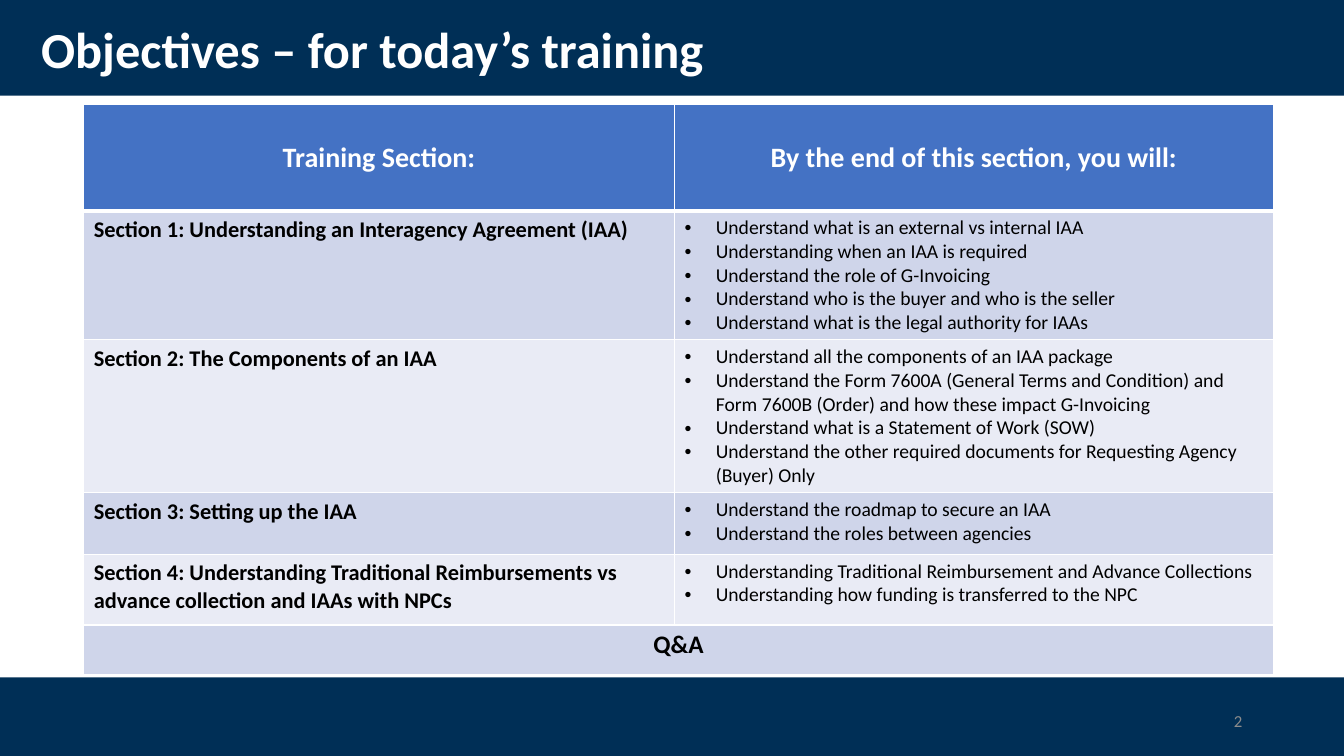
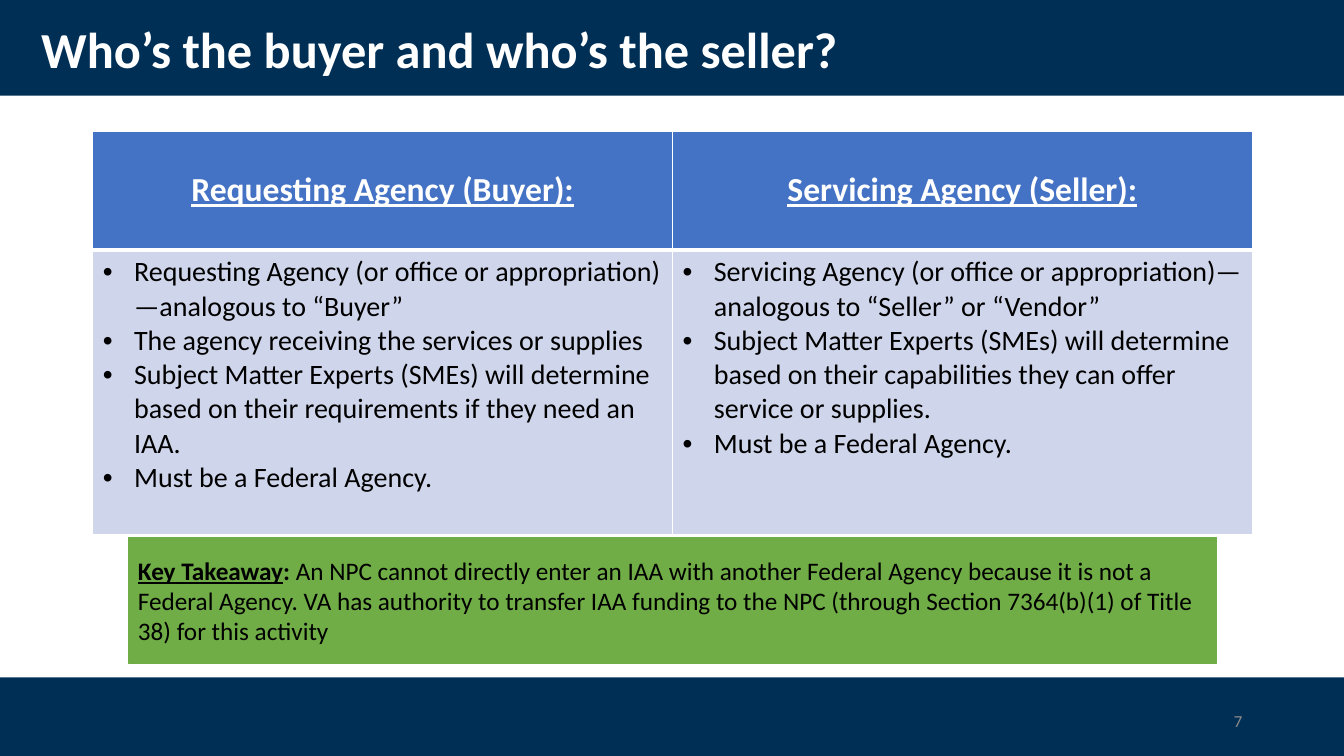
"""Builds two training slides on interagency agreements."""
from lxml import etree
from pptx import Presentation
from pptx.dml.color import RGBColor
from pptx.enum.shapes import MSO_SHAPE
from pptx.enum.text import MSO_ANCHOR, PP_ALIGN
from pptx.oxml.ns import qn
from pptx.util import Inches, Pt

NAVY = RGBColor(0x00, 0x2F, 0x56)
BLUE = RGBColor(0x44, 0x72, 0xC4)
BAND_DARK = RGBColor(0xCF, 0xD5, 0xEA)
BAND_LIGHT = RGBColor(0xE9, 0xEB, 0xF5)
GREEN = RGBColor(0x70, 0xAD, 0x47)
GREY = RGBColor(0x8C, 0x8C, 0x8C)
BLACK = RGBColor(0x00, 0x00, 0x00)
WHITE = RGBColor(0xFF, 0xFF, 0xFF)
RECTANGLE = MSO_SHAPE.RECTANGLE
MIDDLE, TOP = MSO_ANCHOR.MIDDLE, MSO_ANCHOR.TOP
LEFT, CENTER, RIGHT = PP_ALIGN.LEFT, PP_ALIGN.CENTER, PP_ALIGN.RIGHT
FONT = "Calibri"
WIDTH, HEIGHT = 13.33, 7.5

SECTIONS = [
    ("Section 1: Understanding an Interagency Agreement (IAA)", [
        "Understand what is an external vs internal IAA",
        "Understanding when an IAA is required",
        "Understand the role of G-Invoicing",
        "Understand who is the buyer and who is the seller",
        "Understand what is the legal authority for IAAs"]),
    ("Section 2: The Components of an IAA", [
        "Understand all the components of an IAA package",
        "Understand the Form 7600A (General Terms and Condition) and "
        "Form 7600B (Order) and how these impact G-Invoicing",
        "Understand what is a Statement of Work (SOW)",
        "Understand the other required documents for Requesting Agency "
        "(Buyer) Only"]),
    ("Section 3: Setting up the IAA", [
        "Understand the roadmap to secure an IAA",
        "Understand the roles between agencies"]),
    ("Section 4: Understanding Traditional Reimbursements vs advance "
     "collection and IAAs with NPCs", [
         "Understanding Traditional Reimbursement and Advance Collections",
         "Understanding how funding is transferred to the NPC"]),
]
BUYER = [
    "Requesting Agency (or office or appropriation)—analogous to “Buyer”",
    "The agency receiving the services or supplies",
    "Subject Matter Experts (SMEs) will determine based on their "
    "requirements if they need an IAA.",
    "Must be a Federal Agency.",
]
SELLER = [
    "Servicing Agency (or office or appropriation)—analogous to “Seller” "
    "or “Vendor”",
    "Subject Matter Experts (SMEs) will determine based on their "
    "capabilities they can offer service or supplies.",
    "Must be a Federal Agency.",
]
TAKEAWAY = (
    "An NPC cannot directly enter an IAA with another Federal Agency because "
    "it is not a Federal Agency. VA has authority to transfer IAA funding to "
    "the NPC (through Section 7364(b)(1) of Title 38) for this activity")


class Deck:
    """Holds the shared style and the current slide."""

    def __init__(self):
        self.presentation = Presentation()
        self.presentation.slide_width = Inches(WIDTH)
        self.presentation.slide_height = Inches(HEIGHT)
        self.slide = None

    def start_slide(self, title, number):
        layout = self.presentation.slide_layouts[6]
        self.slide = self.presentation.slides.add_slide(layout)
        self.rectangle(0, 0, WIDTH, 0.95, NAVY)
        self.rectangle(0, 6.72, WIDTH, HEIGHT - 6.72, NAVY)
        heading = self.text(0.31, 0.18, 11.5, 0.68, title, 36, WHITE, bold=True)
        heading.line_spacing = 0.9
        self.text(9.42, 6.95, 3, 0.4, str(number), 12, GREY, align=RIGHT)

    def rectangle(self, left, top, width, height, fill):
        box = self.slide.shapes.add_shape(
            RECTANGLE, Inches(left), Inches(top), Inches(width), Inches(height))
        box.shadow.inherit = False
        box.fill.solid()
        box.fill.fore_color.rgb = fill
        box.line.fill.background()
        return box

    def style(self, paragraph, size, color, bold=False, underline=False,
              align=LEFT):
        paragraph.alignment = align
        font = paragraph.font
        font.name, font.size, font.bold = FONT, Pt(size), bold
        font.underline = underline
        font.color.rgb = color

    def text(self, left, top, width, height, words, size, color, **look):
        frame = self.slide.shapes.add_textbox(
            Inches(left), Inches(top), Inches(width), Inches(height)).text_frame
        frame.word_wrap = True
        frame.vertical_anchor = MIDDLE
        paragraph = frame.paragraphs[0]
        paragraph.text = words
        self.style(paragraph, size, color, **look)
        return paragraph

    def table(self, left, top, columns, rows):
        grid = self.slide.shapes.add_table(
            len(rows), len(columns), Inches(left), Inches(top),
            Inches(sum(columns)), Inches(sum(rows))).table
        for column, width in zip(grid.columns, columns):
            column.width = Inches(width)
        for index, (row, height) in enumerate(zip(grid.rows, rows)):
            row.height = Inches(height)
            for cell in row.cells:
                self.borders(cell, 3 if index == 1 else 1, 3 if index == 0 else 1)
                cell.fill.solid()
                cell.fill.fore_color.rgb = (
                    BLUE if index == 0 else BAND_DARK if index % 2 else BAND_LIGHT)
                cell.vertical_anchor = TOP if index else MIDDLE
        return grid

    def borders(self, cell, top, bottom):
        properties = cell._tc.get_or_add_tcPr()
        for side, points in (("L", 1), ("R", 1), ("T", top), ("B", bottom)):
            line = etree.SubElement(properties, qn(f"a:ln{side}"), w=str(Pt(points)))
            fill = etree.SubElement(line, qn("a:solidFill"))
            etree.SubElement(fill, qn("a:srgbClr"), val=str(WHITE))

    def cell_text(self, cell, words, size, color=BLACK, **look):
        paragraph = cell.text_frame.paragraphs[0]
        paragraph.text = words
        self.style(paragraph, size, color, bold=True, **look)

    def cell_bullets(self, cell, items, size):
        cell.text = "\n".join(items)
        for paragraph in cell.text_frame.paragraphs:
            properties = paragraph._p.get_or_add_pPr()
            properties.set("marL", str(Inches(0.31)))
            properties.set("indent", str(Inches(-0.31)))
            etree.SubElement(properties, qn("a:buFont"), typeface="Arial")
            etree.SubElement(properties, qn("a:buChar"), char="•")
            self.style(paragraph, size, BLACK)

    def callout(self, left, top, width, height, label, words):
        box = self.rectangle(left, top, width, height, GREEN)
        box.line.color.rgb = GREEN
        box.line.width = Pt(0.5)
        frame = box.text_frame
        frame.word_wrap = True
        frame.vertical_anchor = MIDDLE
        paragraph = frame.paragraphs[0]
        self.style(paragraph, 18, BLACK)
        for part, bold, underline in (
                (label, True, True), (": ", True, False), (words, False, False)):
            run = paragraph.add_run()
            run.text = part
            run.font.bold, run.font.underline = bold, underline
            run.font.color.rgb = BLACK


def objectives(deck):
    deck.start_slide("Objectives – for today’s training", 2)
    grid = deck.table(0.83, 1.04, [5.86, 5.94], [1.05, 1.28, 1.52, 0.61, 0.7, 0.49])
    for column, heading in enumerate(
            ("Training Section:", "By the end of this section, you will:")):
        deck.cell_text(grid.cell(0, column), heading, 20, WHITE, align=CENTER)
    for row, (section, goals) in enumerate(SECTIONS, start=1):
        deck.cell_text(grid.cell(row, 0), section, 16)
        deck.cell_bullets(grid.cell(row, 1), goals, 14)
    closing = grid.cell(5, 0)
    closing.merge(grid.cell(5, 1))
    deck.cell_text(closing, "Q&A", 18, align=CENTER)


def buyer_and_seller(deck):
    deck.start_slide("Who’s the buyer and who’s the seller?", 7)
    grid = deck.table(0.92, 1.3, [5.75, 5.75], [1.18, 2.82])
    for column, (agency, traits) in enumerate((
            ("Requesting Agency (Buyer):", BUYER),
            ("Servicing Agency (Seller):", SELLER))):
        deck.cell_text(grid.cell(0, column), agency, 24, WHITE,
                       underline=True, align=CENTER)
        deck.cell_bullets(grid.cell(1, column), traits, 20)
    deck.callout(1.27, 5.33, 10.79, 1.25, "Key Takeaway", TAKEAWAY)


def main():
    deck = Deck()
    objectives(deck)
    buyer_and_seller(deck)
    deck.presentation.save("out.pptx")


if __name__ == "__main__":
    main()
